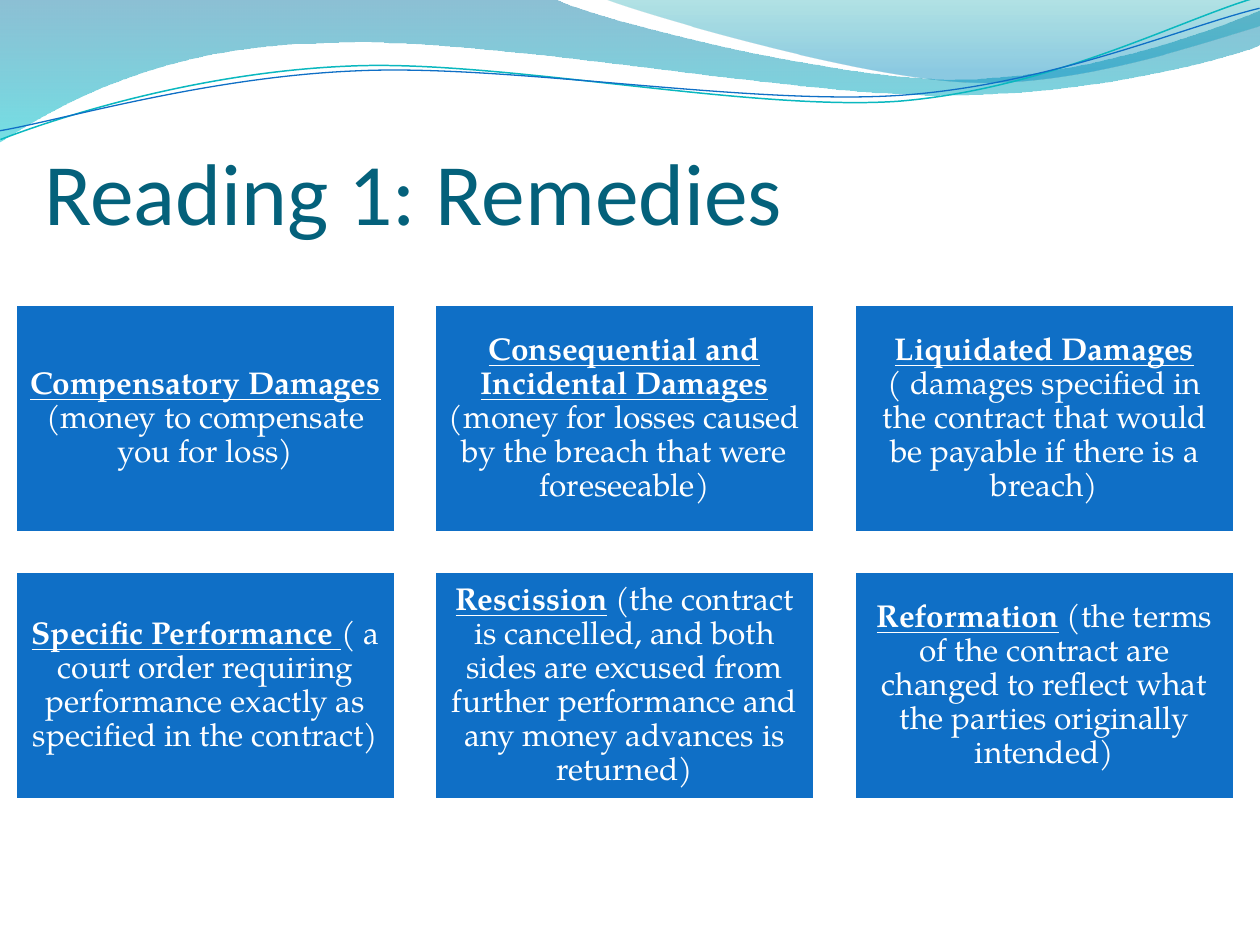
from lxml import etree
from pptx import Presentation
from pptx import util as u
from pptx.dml.color import RGBColor
from pptx.enum import shapes, text
from pptx.oxml.ns import qn

PX = 914400 / 126

BANDS = [
    ([[(0, 0)], [(554, -1)],
      [(600, 21), (837, 79), (955, 79)], [(1075, 79), (1207, 33), (1260, 11)],
      [(1261, 45)],
      [(1239, 55), (1096, 96), (940, 95)], [(784, 95), (481, 35), (324, 43)],
      [(163, 45), (58, 105), (-1, 142)]],
     [(0, "0074A1", 45), (1, "00C6CF", 55)]),
    ([[(604, -1)],
      [(641, 14), (859, 78), (969, 82)], [(1079, 87), (1211, 40), (1260, 26)],
      [(1260, 0)]],
     [(0, "00A1A9", 30), (0.8, "008BBF", 45)]),
]

WAVE_LINES = [
    ([[(-2, 110)], [(58, 90), (199, 52), (350, 53)],
      [(499, 53), (745, 117), (896, 114)], [(1049, 109), (1184, 45), (1260, 27)]],
     "0AB8BF", 0.85),
    ([[(-2, 101)], [(57, 94), (207, 57), (357, 58)],
      [(509, 58), (750, 112), (902, 108)], [(1052, 104), (1188, 52), (1262, 38)]],
     "0F6FC6", 0.75),
]

REMEDIES = [
    ("Compensatory Damages ", "(money to compensate you for loss)", False),
    ("Consequential and Incidental Damages ",
     "(money for losses caused by the breach that were foreseeable)", False),
    ("Liquidated Damages",
     "( damages specified in the contract that would be payable if there is a breach)", True),
    ("Specific Performance ",
     "( a court order requiring performance exactly as specified in the contract)", False),
    ("Rescission",
     " (the contract is cancelled, and both sides are excused from further performance"
     " and any money advances is returned)", False),
    ("Reformation",
     " (the terms of the contract are changed to reflect what the parties originally intended)",
     False),
]


def px(length):
    return u.Emu(round(length * PX))


def color(value):
    return RGBColor.from_string(value)


class SlideBuilder:
    title_font, body_font = "Calibri", "TeX Gyre Pagella"
    title_color, box_color, light = "04617B", "0F6FC6", "FFFFFF"

    def __init__(self, slide):
        self.slide = slide

    def outline(self, segments, close):
        points = [(px(x), px(y)) for segment in segments for x, y in segment]
        builder = self.slide.shapes.build_freeform(*points[0])
        builder.add_line_segments(points[1:], close=close)
        shape = builder.convert_to_shape()
        shape.shadow.inherit = False
        self.bend(shape, segments[1:])
        return shape

    def bend(self, shape, segments):
        steps = iter(list(shape.element.iter(qn("a:lnTo"))))
        for segment in segments:
            group = [next(steps) for point in segment]
            if len(group) == 3:
                curve = etree.Element(qn("a:cubicBezTo"))
                group[0].addprevious(curve)
                for step in group:
                    curve.append(step[0])
                    step.getparent().remove(step)

    def band(self, segments, stops):
        shape = self.outline(segments, True)
        shape.line.fill.background()
        shape.fill.gradient()
        shape.fill.gradient_angle = 270
        for stop, (position, value, opacity) in zip(shape.fill.gradient_stops, stops):
            stop.position = position
            stop.color.rgb = color(value)
        colors = list(shape.element.spPr.iter(qn("a:srgbClr")))
        for element, (position, value, opacity) in zip(colors, stops):
            etree.SubElement(element, qn("a:alpha"), val=str(opacity * 1000))

    def wave_line(self, segments, value, width):
        shape = self.outline(segments, False)
        shape.rotation = 357.3
        shape.fill.background()
        shape.line.color.rgb = color(value)
        shape.line.width = u.Pt(width)

    def title(self, words, left, top, width, height):
        shape = self.slide.shapes.title
        shape.element.getparent().append(shape.element)
        shape.left, shape.top, shape.width, shape.height = map(px, (left, top, width, height))
        frame = shape.text_frame
        frame.text = words
        frame.auto_size = text.MSO_AUTO_SIZE.NONE
        frame.vertical_anchor = text.MSO_ANCHOR.BOTTOM
        frame.margin_left = frame.margin_right = frame.margin_bottom = 0
        paragraph = frame.paragraphs[0]
        paragraph.alignment = text.PP_ALIGN.LEFT
        self.format(paragraph.runs[0], self.title_font, 50, self.title_color)

    def format(self, run, name, size, value):
        run.font.name, run.font.size = name, u.Pt(size)
        run.font.color.rgb = color(value)

    def box(self, heading, detail, break_after, left, top, width, height):
        shape = self.slide.shapes.add_shape(
            shapes.MSO_SHAPE.RECTANGLE, *map(px, (left, top, width, height)))
        shape.shadow.inherit = False
        shape.fill.solid()
        shape.fill.fore_color.rgb = color(self.box_color)
        shape.line.color.rgb = color(self.light)
        shape.line.width = u.Pt(2)
        frame = shape.text_frame
        frame.word_wrap = True
        frame.vertical_anchor = text.MSO_ANCHOR.MIDDLE
        frame.margin_left = frame.margin_right = px(9)
        frame.margin_top = frame.margin_bottom = px(9)
        frame.text = heading
        paragraph = frame.paragraphs[0]
        paragraph.alignment = text.PP_ALIGN.CENTER
        paragraph.line_spacing = 0.9
        if break_after:
            paragraph.add_line_break()
        paragraph.add_run().text = detail
        for run, strong in zip(paragraph.runs, (True, False)):
            self.format(run, self.body_font, 18, self.light)
            run.font.bold = run.font.underline = strong


def main():
    presentation = Presentation()
    presentation.slide_width, presentation.slide_height = px(1260), px(945)
    builder = SlideBuilder(presentation.slides.add_slide(presentation.slide_layouts[5]))
    for segments, stops in BANDS:
        builder.band(segments, stops)
    for segments, value, width in WAVE_LINES:
        builder.wave_line(segments, value, width)
    builder.title("Reading 1: Remedies", 44, 86, 1134, 157)
    for index, remedy in enumerate(REMEDIES):
        row, column = divmod(index, 3)
        builder.box(*remedy, 15 + column * 839 // 2, 304 + row * 267, 381, 229)
    presentation.save("out.pptx")


if __name__ == "__main__":
    main()
